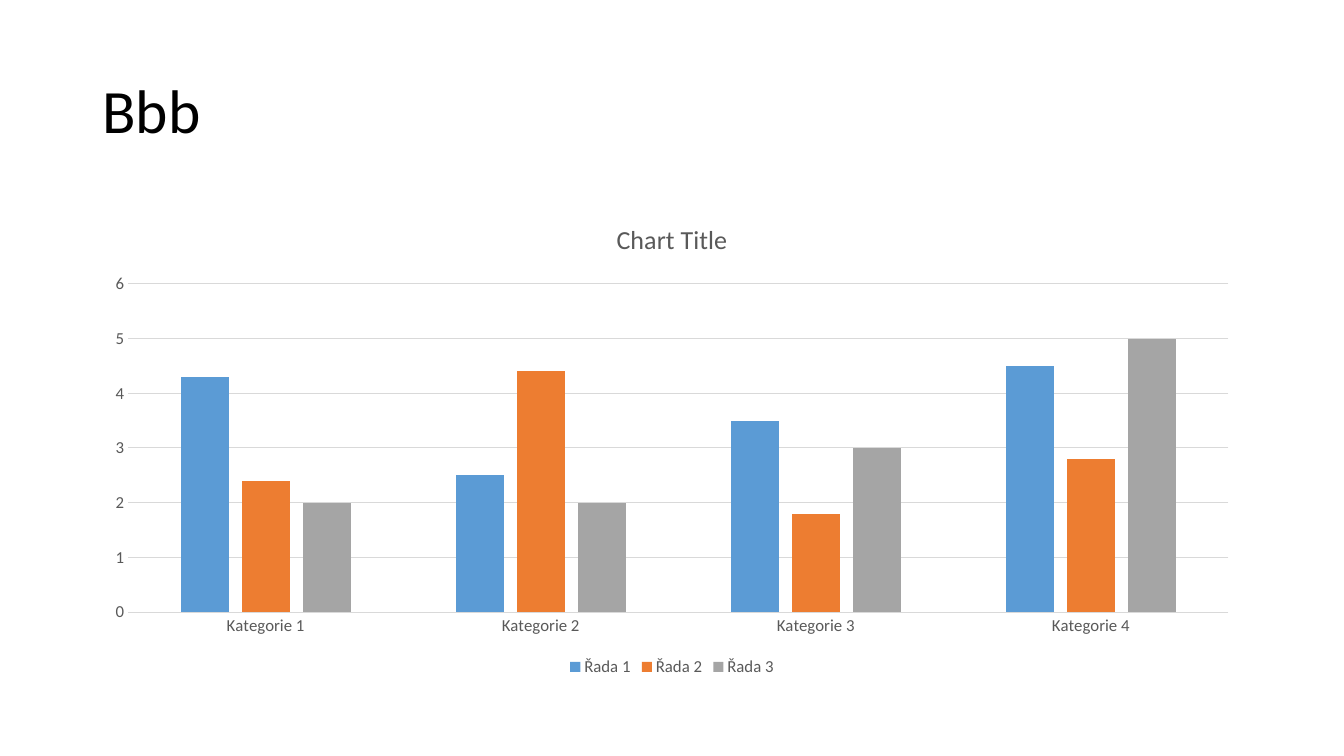
from pptx import Presentation
from pptx.chart.data import CategoryChartData
from pptx.dml.color import RGBColor
from pptx.enum.chart import XL_CHART_TYPE, XL_LEGEND_POSITION, XL_TICK_MARK
from pptx.enum.text import MSO_ANCHOR, PP_ALIGN
from pptx.util import Cm, Pt

COLUMN = XL_CHART_TYPE.COLUMN_CLUSTERED
BOTTOM = XL_LEGEND_POSITION.BOTTOM
NO_TICK = XL_TICK_MARK.NONE
MIDDLE = MSO_ANCHOR.MIDDLE
LEFT = PP_ALIGN.LEFT

BLACK = RGBColor(0x00, 0x00, 0x00)
GRAY = RGBColor(0x59, 0x59, 0x59)
PALE = RGBColor(0xD9, 0xD9, 0xD9)
BLUE = RGBColor(0x5B, 0x9B, 0xD5)
ORANGE = RGBColor(0xED, 0x7D, 0x31)
SILVER = RGBColor(0xA5, 0xA5, 0xA5)

FONT = "Calibri"
EDGE = Cm(2.33)
WIDTH = Cm(29.21)
GROUPS = [f"Kategorie {n}" for n in range(1, 5)]
SERIES = [
    ("Řada 1", (4.3, 2.5, 3.5, 4.5), BLUE),
    ("Řada 2", (2.4, 4.4, 1.8, 2.8), ORANGE),
    ("Řada 3", (2, 2, 3, 5), SILVER),
]


def set_font(font, size, color):
    font.name = FONT
    font.size = Pt(size)
    font.bold = False
    font.color.rgb = color


def set_line(line):
    line.color.rgb = PALE
    line.width = Pt(0.75)


def add_title(slide, text):
    title = slide.shapes.title
    title.left, title.top = EDGE, Cm(1.01)
    title.width, title.height = WIDTH, Cm(3.68)
    frame = title.text_frame
    frame.text = text
    frame.word_wrap = True
    frame.vertical_anchor = MIDDLE
    para = frame.paragraphs[0]
    para.alignment = LEFT
    para.line_spacing = 0.9
    set_font(para.font, 44, BLACK)


def style_axis(axis):
    axis.major_tick_mark = NO_TICK
    axis.minor_tick_mark = NO_TICK
    set_font(axis.tick_labels.font, 12, GRAY)


def style_axes(chart):
    groups, values = chart.category_axis, chart.value_axis
    style_axis(groups)
    set_line(groups.format.line)
    style_axis(values)
    values.minimum_scale = 0
    values.maximum_scale = 6
    values.major_unit = 1
    values.format.line.fill.background()
    set_line(values.major_gridlines.format.line)


def style_bars(plot):
    plot.gap_width = 219
    plot.overlap = -27
    plot.vary_by_categories = False
    for bars, (_, _, color) in zip(plot.series, SERIES):
        bars.format.fill.solid()
        bars.format.fill.fore_color.rgb = color


def add_chart(slide):
    data = CategoryChartData()
    data.categories = GROUPS
    for name, values, _ in SERIES:
        data.add_series(name, values)
    frame = slide.shapes.add_chart(
        COLUMN, EDGE, Cm(5.07), WIDTH, Cm(12.09), data)
    chart = frame.chart
    set_font(chart.font, 10, BLACK)
    chart.has_title = True
    head = chart.chart_title
    head.include_in_layout = False
    head.text_frame.text = "Chart Title"
    set_font(head.text_frame.paragraphs[0].font, 18.6, GRAY)
    chart.has_legend = True
    chart.legend.position = BOTTOM
    chart.legend.include_in_layout = False
    set_font(chart.legend.font, 12, GRAY)
    style_axes(chart)
    style_bars(chart.plots[0])


def main():
    deck = Presentation()
    deck.slide_width = Cm(33.87)
    deck.slide_height = Cm(19.05)
    slide = deck.slides.add_slide(deck.slide_layouts[5])
    add_title(slide, "Bbb")
    add_chart(slide)
    deck.save("out.pptx")


if __name__ == "__main__":
    main()
